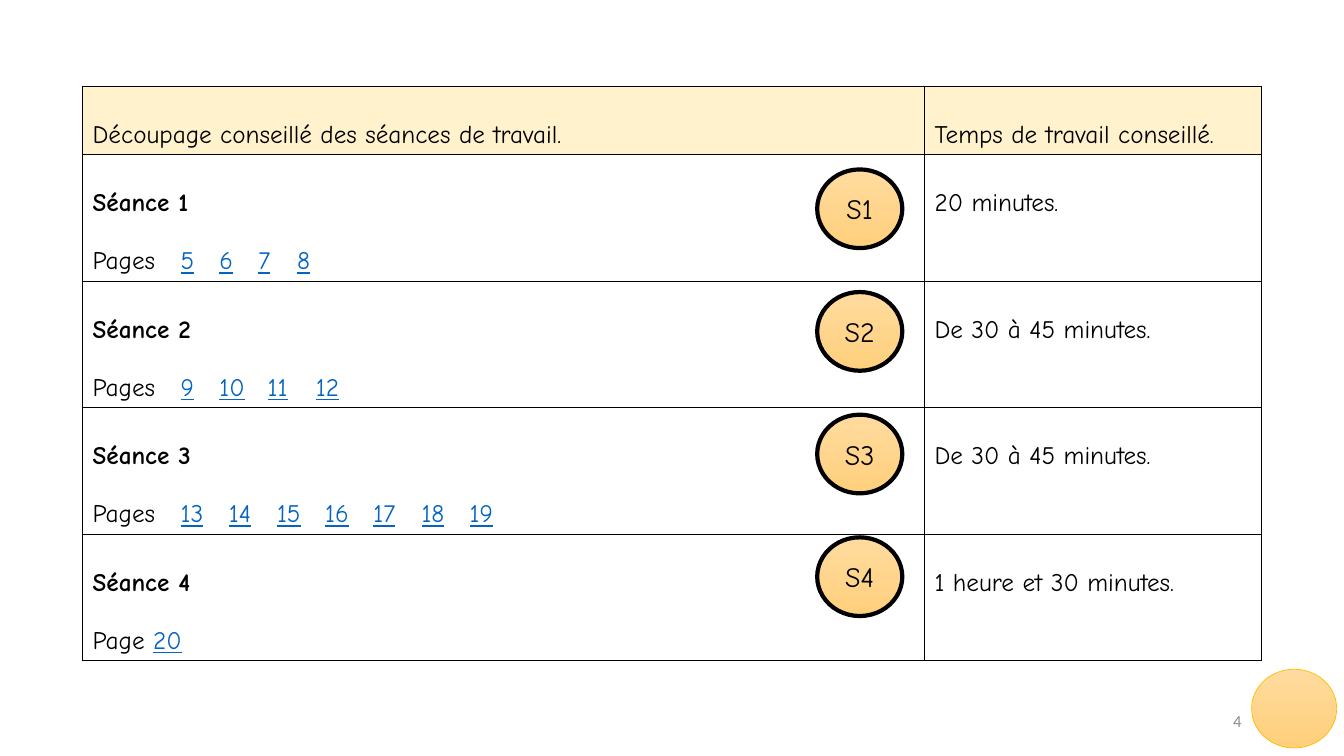
from lxml.etree import SubElement
from pptx import Presentation
from pptx.dml.color import RGBColor
from pptx.enum.shapes import MSO_SHAPE
from pptx.enum.text import MSO_ANCHOR, PP_ALIGN
from pptx.oxml import parse_xml
from pptx.oxml.ns import nsdecls, qn
from pptx.util import Pt

HAND_FONT = "Comic Neue"
BLACK, LINK_BLUE, CREAM = "000000", "0563C1", "FFF2CC"

HEADINGS = ("Découpage conseillé des séances de travail.", "Temps de travail conseillé.")
SESSIONS = [
    (range(5, 9), "20 minutes."),
    (range(9, 13), "De 30 à 45 minutes."),
    (range(13, 20), "De 30 à 45 minutes."),
    (range(20, 21), "1 heure et 30 minutes."),
]


def rgb(value):
    return RGBColor.from_string(value)


def set_font(font, size, color=BLACK, name=HAND_FONT):
    font.size, font.name = Pt(size), name
    font.color.rgb = rgb(color)


def style_line(paragraph, bold=False):
    paragraph.line_spacing = 2.0
    set_font(paragraph.font, 18)
    paragraph.font.bold = bold


def style_cell(cell, fill=None):
    if fill:
        cell.fill.solid()
        cell.fill.fore_color.rgb = rgb(fill)
    else:
        cell.fill.background()
    properties = cell._tc.get_or_add_tcPr()
    for position, side in enumerate(("lnL", "lnR", "lnT", "lnB")):
        properties.insert(position, parse_xml(
            f'<a:{side} {nsdecls("a")} w="12700"><a:solidFill>'
            f'<a:srgbClr val="{BLACK}"/></a:solidFill></a:{side}>'))


def write_cell(cell, text, fill=None):
    style_cell(cell, fill)
    line = cell.text_frame.paragraphs[0]
    line.text = text
    style_line(line)


def add_page_numbers(line, pages):
    """Write the page list, spaced by tab stops that follow the number widths."""
    style_line(line)
    several = len(pages) > 1
    line.add_run().text = "Pages" if several else "Page "
    if several:
        tabs = SubElement(line._p.get_or_add_pPr(), qn("a:tabLst"))
        line._p.pPr.find(qn("a:defRPr")).addprevious(tabs)
    stop = 62.9
    for page in pages:
        if several:
            SubElement(tabs, qn("a:tab"), pos=str(Pt(stop)), algn="l")
            line.add_run().text = "\t"
            stop += 27.7 if page < 10 else 34.4
        number = line.add_run()
        number.text = str(page)
        number.font.underline = True
        number.font.color.rgb = rgb(LINK_BLUE)


def add_schedule(slide):
    table = slide.shapes.add_table(
        len(SESSIONS) + 1, 2, Pt(59), Pt(61.8), Pt(842.4), Pt(409.7)).table
    table.first_row = table.horz_banding = False
    table.columns[0].width, table.columns[1].width = Pt(601.4), Pt(241)
    table.rows[0].height = Pt(48.5)
    for column, heading in enumerate(HEADINGS):
        write_cell(table.cell(0, column), heading, CREAM)
    for row, (pages, duration) in enumerate(SESSIONS, start=1):
        table.rows[row].height = Pt(90.3)
        session = table.cell(row, 0)
        write_cell(session, f"Séance {row}")
        session.text_frame.paragraphs[0].font.bold = True
        add_page_numbers(session.text_frame.add_paragraph(), pages)
        write_cell(table.cell(row, 1), duration)


def add_disc(slide, left, top, outline, weight, label=""):
    disc = slide.shapes.add_shape(
        MSO_SHAPE.OVAL, Pt(left), Pt(top), Pt(60.8), Pt(56.2))
    disc.shadow.inherit = False
    disc.fill.gradient()
    disc.fill.gradient_angle = 270
    for stop, color in zip(disc.fill.gradient_stops, ("FFDB9E", "FFD07C")):
        stop.color.rgb = rgb(color)
    disc.line.color.rgb = rgb(outline)
    disc.line.width = Pt(weight)
    if label:
        disc.text_frame.vertical_anchor = MSO_ANCHOR.MIDDLE
        caption = disc.text_frame.paragraphs[0]
        caption.text = label
        caption.alignment = PP_ALIGN.CENTER
        set_font(caption.font, 20)


def add_slide_number(slide, number):
    frame = slide.shapes.add_textbox(Pt(678), Pt(500.5), Pt(216), Pt(28.8)).text_frame
    frame.word_wrap = True
    frame.vertical_anchor = MSO_ANCHOR.MIDDLE
    line = frame.paragraphs[0]
    line.text = number
    line.alignment = PP_ALIGN.RIGHT
    set_font(line.font, 12, "8C8C8C", "Calibri")


def main():
    deck = Presentation()
    deck.slide_width, deck.slide_height = Pt(960), Pt(540)
    slide = deck.slides.add_slide(deck.slide_layouts[6])

    # Sessions and their durations
    add_schedule(slide)

    # Session badges
    for index in range(len(SESSIONS)):
        add_disc(slide, 583.7, 121 + 87.6 * index, BLACK, 3, f"S{index + 1}")

    # Corner disc and slide number
    add_disc(slide, 894, 478, "FFC000", 0.5)
    add_slide_number(slide, "4")

    deck.save("out.pptx")


if __name__ == "__main__":
    main()
